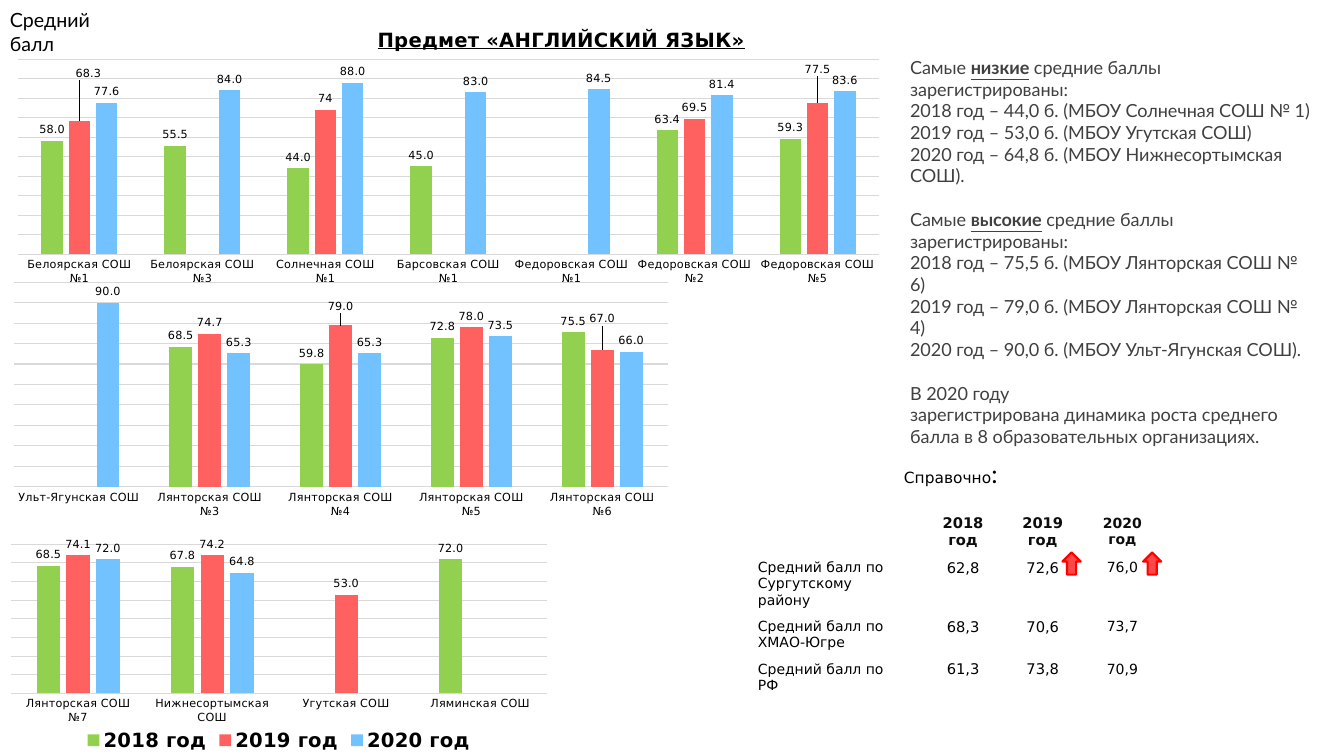
from dataclasses import dataclass, field
from typing import Any, Optional

from pptx import Presentation
from pptx.chart.data import CategoryChartData
from pptx.dml.color import RGBColor
from pptx.enum.chart import XL_CHART_TYPE, XL_LABEL_POSITION, XL_LEGEND_POSITION, XL_TICK_MARK
from pptx.enum.shapes import MSO_SHAPE
from pptx.enum.text import PP_ALIGN
from pptx.oxml import parse_xml
from pptx.oxml.ns import nsdecls
from pptx.util import Pt

COLUMNS = XL_CHART_TYPE.COLUMN_CLUSTERED
OUTSIDE_END = XL_LABEL_POSITION.OUTSIDE_END
LEGEND_BOTTOM = XL_LEGEND_POSITION.BOTTOM
NO_TICK = XL_TICK_MARK.NONE
UP_ARROW = MSO_SHAPE.UP_ARROW
CENTER, LEFT = PP_ALIGN.CENTER, PP_ALIGN.LEFT

BLACK = RGBColor(0x00, 0x00, 0x00)
WHITE = RGBColor(0xFF, 0xFF, 0xFF)
HEADER_INK = RGBColor(0x0D, 0x0D, 0x0D)
TEXT_GREY = RGBColor(0x40, 0x40, 0x40)
GRID_GREY = RGBColor(0xD9, 0xD9, 0xD9)
ARROW_FILL = RGBColor(0xFF, 0x47, 0x47)
ARROW_LINE = RGBColor(0xFF, 0x00, 0x00)
YEAR_COLORS = {
    "2018 год": RGBColor(0x92, 0xD0, 0x50),
    "2019 год": RGBColor(0xFF, 0x61, 0x61),
    "2020 год": RGBColor(0x71, 0xC2, 0xFF),
}

SANS, LATO = "DejaVu Sans", "Lato"
CHART_FONT = {"name": SANS, "size": Pt(8), "bold": False, "color": BLACK}
HEADING_FONT = CHART_FONT | {"size": Pt(14), "bold": True}
NOTE_FONT = {"name": LATO, "size": Pt(12.9), "color": TEXT_GREY}
EMPHASIS_FONT = NOTE_FONT | {"bold": True, "underline": True}


@dataclass
class Box:
    left: float
    top: float
    width: float
    height: float

    def lengths(self) -> tuple:
        return Pt(self.left), Pt(self.top), Pt(self.width), Pt(self.height)


@dataclass
class ScoreChart:
    box: Box
    plot: tuple  # x, y, width, height as fractions of the chart
    maximum: int
    schools: list[str]
    scores: list[list[Optional[float]]]  # one list a year
    middle_format: str = "0.0"  # labels of 2019
    label_shifts: dict = field(default_factory=dict)  # labels of 2019
    title: str = ""
    legend: bool = False


CHARTS = [
    ScoreChart(
        Box(0, 6.5, 640.8, 200.9), (0.02, 0.178, 0.96, 0.694), 100,
        ["Белоярская СОШ №1", "Белоярская СОШ №3", "Солнечная СОШ №1", "Барсовская СОШ №1",
         "Федоровская СОШ №1", "Федоровская СОШ №2", "Федоровская СОШ №5"],
        [[58, 55.5, 44, 45, None, 63.4, 59.3],
         [68.3, None, 74, None, None, 69.5, 77.5],
         [77.6, 84, 88, 83, 84.5, 81.4, 83.6]],
        middle_format="General", label_shifts={0: (0.01, -0.13), 6: (0, -0.08)},
        title="Предмет «АНГЛИЙСКИЙ ЯЗЫК»"),
    ScoreChart(
        Box(0, 198, 486.7, 175.7), (0.02, 0.02, 0.96, 0.833), 100,
        ["Ульт-Ягунская СОШ"] + [f"Лянторская СОШ №{number}" for number in range(3, 7)],
        [[None, 68.5, 59.8, 72.8, 75.5],
         [None, 74.7, 79, 78, 67],
         [90, 65.3, 65.3, 73.5, 66]],
        label_shifts={2: (0, -0.03), 4: (0, -0.08)}),
    ScoreChart(
        Box(0, 379.4, 398.2, 160.6), (0.02, 0.059, 0.962, 0.663), 80,
        ["Лянторская СОШ №7", "Нижнесортымская СОШ", "Угутская СОШ", "Ляминская СОШ"],
        [[68.5, 67.8, None, 72], [74.1, 74.2, 53, None], [72, 64.8, None, None]],
        legend=True),
]

REFERENCE_ROWS = [
    ["", *YEAR_COLORS],
    ["Средний балл по Сургутскому району", "62,8", "72,6", "76,0"],
    ["Средний балл по ХМАО-Югре", "68,3", "70,6", "73,7"],
    ["Средний балл по РФ", "61,3", "73,8", "70,9"],
]
COLUMN_WIDTHS = [128.9, 56.9, 56.9, 56.9]
COLUMN_SIZES = [10, 10.5, 10.5, 10]
ROW_HEIGHTS = [30.2, 35.3, 30.2, 35.3]

# Each paragraph: its runs, and whether a gap stands before it
NOTES = [
    ([("Самые ", NOTE_FONT), ("низкие", EMPHASIS_FONT),
      (" средние баллы зарегистрированы:", NOTE_FONT)], False),
    ([("2018 год – 44,0 б. (МБОУ Солнечная СОШ № 1)", NOTE_FONT)], False),
    ([("2019 год – 53,0 б. (МБОУ Угутская СОШ)", NOTE_FONT)], False),
    ([("2020 год – 64,8 б. (МБОУ Нижнесортымская СОШ).", NOTE_FONT)], False),
    ([("Самые ", NOTE_FONT), ("высокие", EMPHASIS_FONT),
      (" средние баллы зарегистрированы:", NOTE_FONT)], True),
    ([("2018 год – 75,5 б. (МБОУ Лянторская СОШ № 6)", NOTE_FONT)], False),
    ([("2019 год – 79,0 б. (МБОУ Лянторская СОШ № 4)", NOTE_FONT)], False),
    ([("2020 год – 90,0 б. (МБОУ Ульт-Ягунская СОШ).", NOTE_FONT)], False),
    ([("В 2020 году", NOTE_FONT)], True),
    ([("зарегистрирована динамика роста среднего балла в 8 образовательных организациях.",
       NOTE_FONT)], False),
]


def apply_format(target: Any, values: dict) -> None:
    for name, value in values.items():
        if name == "color":
            target.color.rgb = value
        else:
            setattr(target, name, value)


def manual_layout(**values: Any) -> Any:
    parts = "".join(f'<c:{name} val="{value}"/>' for name, value in values.items())
    return parse_xml(f'<c:layout {nsdecls("c")}><c:manualLayout>{parts}'
                     '</c:manualLayout></c:layout>')


def place_title(chart: Any, text: str) -> None:
    frame = chart.chart_title.text_frame
    frame.text = text
    apply_format(frame.paragraphs[0].runs[0].font, HEADING_FONT | {"underline": True})
    title = chart._chartSpace.xpath(".//c:title")[0]
    for layout in title.xpath("c:layout"):
        title.remove(layout)
    title.xpath("c:tx")[0].addnext(manual_layout(xMode="edge", yMode="edge", x=0.417, y=0.05))


def shift_label(series: Any, index: int, shift: tuple, number_format: str) -> None:
    label = series.points[index].data_label
    apply_format(label.font, CHART_FONT)
    label.position = OUTSIDE_END
    mark = series._element.xpath(f".//c:dLbl/c:idx[@val='{index}']")[0]
    mark.addnext(parse_xml(f'<c:numFmt {nsdecls("c")} formatCode="{number_format}" '
                           'sourceLinked="0"/>'))
    mark.addnext(manual_layout(x=shift[0], y=shift[1]))


def draw_chart(slide: Any, item: ScoreChart) -> None:
    formats = ["0.0", item.middle_format, "0.0"]
    data = CategoryChartData()
    data.categories = item.schools
    for year, scores, number_format in zip(YEAR_COLORS, item.scores, formats):
        data.add_series(year, scores, number_format)
    chart = slide.shapes.add_chart(COLUMNS, *item.box.lengths(), data).chart
    apply_format(chart.font, CHART_FONT)
    chart.has_title = bool(item.title)
    if item.title:
        place_title(chart, item.title)
    chart.has_legend = item.legend
    if item.legend:
        apply_format(chart.legend, {"position": LEGEND_BOTTOM, "include_in_layout": False})
        apply_format(chart.legend.font, HEADING_FONT)

    # Axes
    apply_format(chart.category_axis, {"major_tick_mark": NO_TICK, "minor_tick_mark": NO_TICK})
    apply_format(chart.category_axis.tick_labels.font, CHART_FONT)
    apply_format(chart.value_axis, {"visible": False, "has_major_gridlines": True,
                                    "minimum_scale": 0, "maximum_scale": item.maximum,
                                    "major_unit": 10})
    for line in (chart.category_axis.format.line, chart.value_axis.major_gridlines.format.line):
        apply_format(line, {"color": GRID_GREY, "width": Pt(0.75)})

    # Columns and labels
    plot = chart.plots[0]
    apply_format(plot, {"gap_width": 219, "overlap": -27, "vary_by_categories": False})
    for series, color, number_format in zip(plot.series, YEAR_COLORS.values(), formats):
        series.format.fill.solid()
        series.format.fill.fore_color.rgb = color
        apply_format(series.data_labels, {"show_value": True, "position": OUTSIDE_END,
                                          "number_format": number_format,
                                          "number_format_is_linked": False})
        apply_format(series.data_labels.font, CHART_FONT)
    for index, shift in item.label_shifts.items():
        shift_label(plot.series[1], index, shift, item.middle_format)

    area = chart._chartSpace.xpath(".//c:plotArea")[0]
    for layout in area.xpath("c:layout"):
        area.remove(layout)
    x, y, width, height = item.plot
    area.insert(0, manual_layout(layoutTarget="inner", xMode="edge", yMode="edge",
                                 x=x, y=y, w=width, h=height))


def draw_text(slide: Any, box: Box, paragraphs: list) -> None:
    frame = slide.shapes.add_textbox(*box.lengths()).text_frame
    frame.word_wrap = True
    for index, (runs, gap) in enumerate(paragraphs):
        paragraph = frame.add_paragraph() if index else frame.paragraphs[0]
        paragraph.space_before = Pt(15.7 if gap else 0)
        for text, values in runs:
            run = paragraph.add_run()
            run.text = text
            apply_format(run.font, values)


def draw_table(slide: Any, box: Box) -> None:
    table = slide.shapes.add_table(len(ROW_HEIGHTS), len(COLUMN_WIDTHS), *box.lengths()).table
    table.horz_banding = False
    for column, width in zip(table.columns, COLUMN_WIDTHS):
        column.width = Pt(width)
    for i, (row, height) in enumerate(zip(table.rows, ROW_HEIGHTS)):
        row.height = Pt(height)
        for j, cell in enumerate(row.cells):
            apply_format(cell, {"text": REFERENCE_ROWS[i][j],
                                "margin_left": Pt(10.8), "margin_right": Pt(10.8)})
            cell.fill.solid()
            cell.fill.fore_color.rgb = WHITE
            paragraph = cell.text_frame.paragraphs[0]
            paragraph.alignment = CENTER if j else LEFT
            apply_format(paragraph.font, {"name": SANS, "size": Pt(COLUMN_SIZES[j]),
                                          "bold": i == 0, "color": BLACK if i else HEADER_INK})
            for position, side in enumerate(("lnL", "lnR", "lnT", "lnB")):
                width = Pt(3 if i == 0 and side == "lnB" else 1)
                cell._tc.get_or_add_tcPr().insert(position, parse_xml(
                    f'<a:{side} {nsdecls("a")} w="{width}"><a:solidFill>'
                    f'<a:srgbClr val="{WHITE}"/></a:solidFill></a:{side}>'))


def draw_arrow(slide: Any, box: Box) -> None:
    arrow = slide.shapes.add_shape(UP_ARROW, *box.lengths())
    arrow.shadow.inherit = False
    arrow.fill.solid()
    arrow.fill.fore_color.rgb = ARROW_FILL
    apply_format(arrow.line, {"color": ARROW_LINE, "width": Pt(1.5)})


def main() -> None:
    presentation = Presentation()
    apply_format(presentation, {"slide_width": Pt(960), "slide_height": Pt(540)})
    slide = presentation.slides.add_slide(presentation.slide_layouts[6])

    for item in CHARTS:
        draw_chart(slide, item)

    # Reference table with its heading and growth arrows
    draw_table(slide, Box(530.6, 364.3, sum(COLUMN_WIDTHS), sum(ROW_HEIGHTS)))
    draw_text(slide, Box(638.6, 324, 90, 28.8),
              [([("Справочно", CHART_FONT | {"size": Pt(11)}),
                 (":", {"name": LATO, "size": Pt(18), "color": BLACK})], False)])
    for left in (758.9, 816.5):
        draw_arrow(slide, Box(left, 394.6, 13, 15.8))

    # Axis caption and notes
    draw_text(slide, Box(0, 2.2, 100, 24.5),
              [([("Средний балл", {"name": LATO, "size": Pt(14), "color": BLACK})], False)])
    draw_text(slide, Box(643, 36.7, 304, 306), NOTES)
    presentation.save("out.pptx")


if __name__ == "__main__":
    main()
